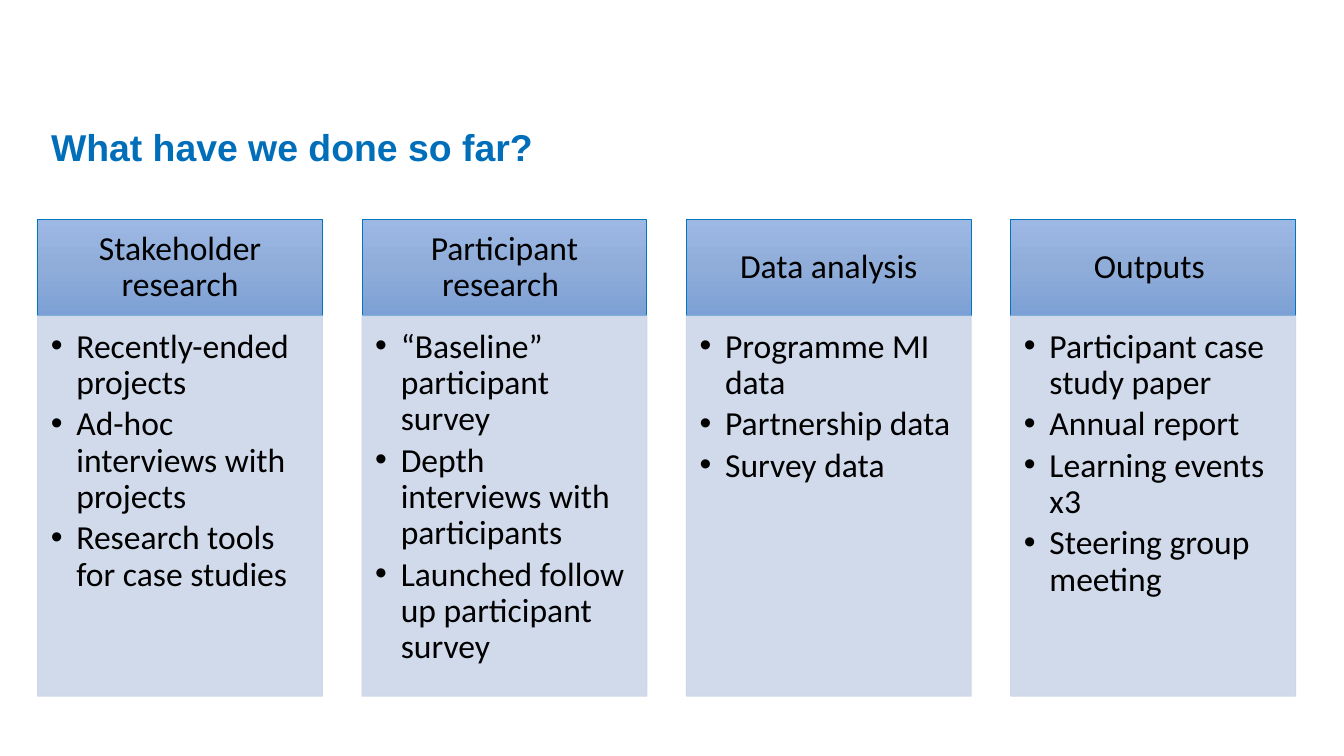
from copy import deepcopy

from lxml.etree import SubElement
from pptx import Presentation
from pptx.dml.color import RGBColor
from pptx.enum.shapes import MSO_SHAPE
from pptx.enum.text import MSO_ANCHOR, PP_ALIGN
from pptx.oxml.ns import qn
from pptx.util import Inches, Pt

COLORS = {
    "title": "006EB8",
    "text": "000000",
    "header_line": "0076C0",
    "header_top": "9DB8E3",
    "header_middle": "90ADDA",
    "header_bottom": "7CA0D5",
    "panel": "CCD6E8",
}

COLUMNS = [
    ("Stakeholder research", [
        "Recently-ended projects",
        "Ad-hoc interviews with projects",
        "Research tools for case studies",
    ]),
    ("Participant research ", [
        "“Baseline” participant survey",
        "Depth interviews with participants",
        "Launched follow up participant survey",
    ]),
    ("Data analysis", ["Programme MI data", "Partnership data", "Survey data"]),
    ("Outputs ", [
        "Participant case study paper",
        "Annual report",
        "Learning events x3",
        "Steering group meeting",
    ]),
]

SLIDE_WIDTH = 10
SLIDE_HEIGHT = SLIDE_WIDTH * 9 / 16
LEFT, RIGHT = 0.28, 9.64
COLUMN_WIDTH = 2.12
COLUMN_STEP = (RIGHT - LEFT - COLUMN_WIDTH) / (len(COLUMNS) - 1)
HEADER_TOP, HEADER_HEIGHT = 1.63, 0.72
PANEL_TOP, PANEL_HEIGHT = HEADER_TOP + HEADER_HEIGHT, 2.83


def rgb(name):
    return RGBColor.from_string(COLORS[name])


def add_bullet(paragraph, indent=0.19):
    properties = paragraph._p.get_or_add_pPr()
    properties.set("marL", str(Inches(indent)))
    properties.set("indent", str(-Inches(indent)))
    SubElement(properties, qn("a:buFont"), typeface="Arial")
    SubElement(properties, qn("a:buChar"), char="•")


def write_text(frame, lines, font="Calibri", size=18, color="text", bold=False,
               align=PP_ALIGN.LEFT, anchor=MSO_ANCHOR.TOP, bullet=False,
               space_after=0, margins=(0.1, 0.05, 0.1, 0.05)):
    frame.word_wrap = True
    frame.vertical_anchor = anchor
    (frame.margin_left, frame.margin_top,
     frame.margin_right, frame.margin_bottom) = map(Inches, margins)
    for index, line in enumerate(lines):
        paragraph = frame.add_paragraph() if index else frame.paragraphs[0]
        if bullet:
            add_bullet(paragraph)
        paragraph.alignment = align
        paragraph.line_spacing = 0.9
        paragraph.space_before = Pt(0)
        paragraph.space_after = Pt(space_after)
        run = paragraph.add_run()
        run.text = line
        run.font.name = font
        run.font.size = Pt(size)
        run.font.bold = bold
        run.font.color.rgb = rgb(color)


class SlideBuilder:
    def __init__(self, presentation):
        self.slide = presentation.slides.add_slide(presentation.slide_layouts[5])

    def title(self, text, left, top, width, height):
        title = self.slide.shapes.title
        title.left, title.top = Inches(left), Inches(top)
        title.width, title.height = Inches(width), Inches(height)
        write_text(title.text_frame, [text], font="Arial", size=20, color="title",
                   bold=True, anchor=MSO_ANCHOR.MIDDLE)

    def rectangle(self, left, top, width, height, line):
        shape = self.slide.shapes.add_shape(
            MSO_SHAPE.RECTANGLE, Inches(left), Inches(top), Inches(width), Inches(height))
        shape.shadow.inherit = False
        shape.line.color.rgb = rgb(line)
        shape.line.width = Pt(0.5)
        return shape

    def header(self, text, left):
        shape = self.rectangle(left, HEADER_TOP, COLUMN_WIDTH, HEADER_HEIGHT, "header_line")
        shape.fill.gradient()
        shape.fill.gradient_angle = 270
        stop_list = shape._element.spPr.find(".//" + qn("a:gsLst"))
        stop_list.append(deepcopy(stop_list[0]))
        names = ("header_top", "header_middle", "header_bottom")
        for index, (stop, name) in enumerate(zip(shape.fill.gradient_stops, names)):
            stop.position = index / 2
            stop.color.rgb = rgb(name)
        write_text(shape.text_frame, [text], align=PP_ALIGN.CENTER,
                   anchor=MSO_ANCHOR.MIDDLE, margins=(0.14, 0.08, 0.14, 0.08))

    def panel(self, items, left):
        shape = self.rectangle(left, PANEL_TOP, COLUMN_WIDTH, PANEL_HEIGHT, "panel")
        shape.fill.solid()
        shape.fill.fore_color.rgb = rgb("panel")
        for color in shape._element.spPr.iter(qn("a:srgbClr")):
            SubElement(color, qn("a:alpha"), val="90000")
        write_text(shape.text_frame, items, bullet=True, space_after=2.7,
                   margins=(0.1, 0.1, 0.14, 0.16))


def main():
    presentation = Presentation()
    presentation.slide_width = Inches(SLIDE_WIDTH)
    presentation.slide_height = Inches(SLIDE_HEIGHT)
    builder = SlideBuilder(presentation)
    builder.title("What have we done so far?", LEFT, 0.84, 8.62, 0.55)
    for index, (heading, items) in enumerate(COLUMNS):
        left = LEFT + index * COLUMN_STEP
        builder.header(heading, left)
        builder.panel(items, left)
    presentation.save("out.pptx")


if __name__ == "__main__":
    main()
